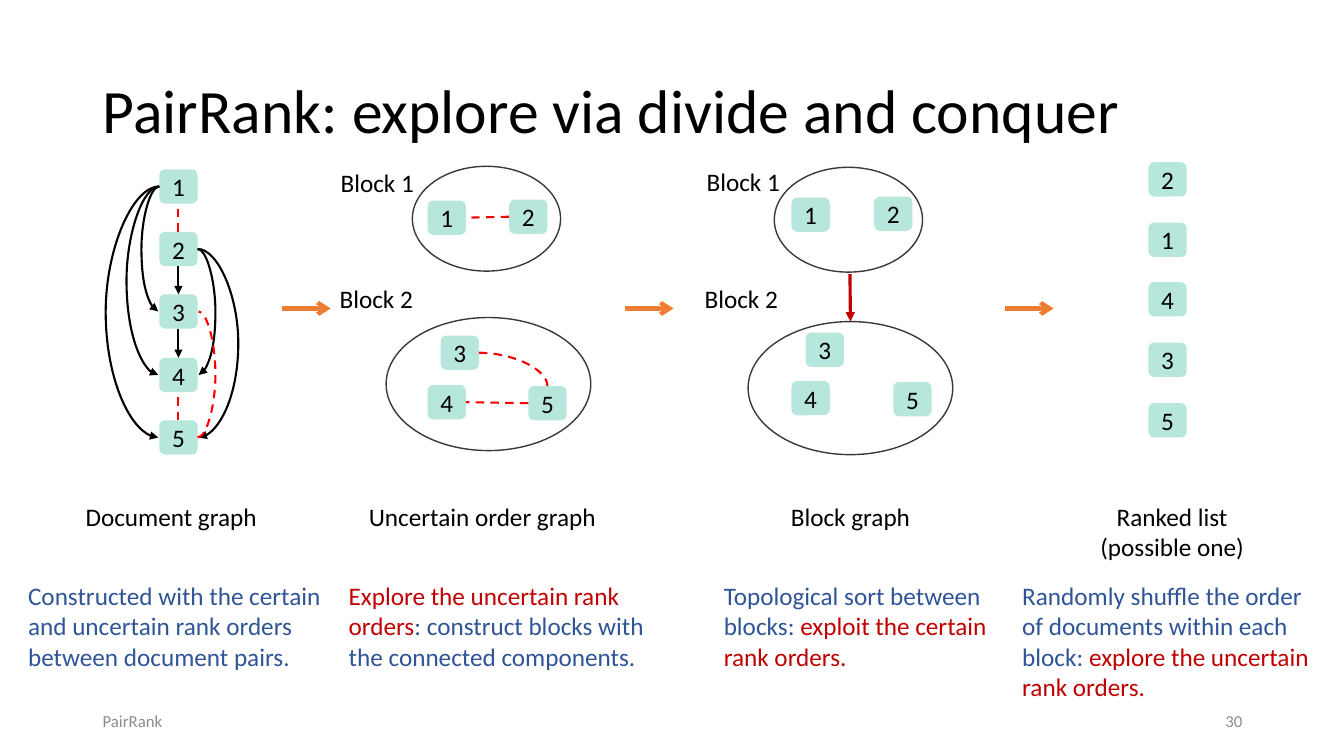
from dataclasses import dataclass

from lxml.etree import SubElement
from pptx import Presentation
from pptx.dml.color import RGBColor
from pptx.enum.dml import MSO_LINE
from pptx.enum.shapes import MSO_CONNECTOR, MSO_SHAPE
from pptx.enum.text import MSO_ANCHOR, MSO_AUTO_SIZE, PP_ALIGN
from pptx.oxml.ns import qn
from pptx.util import Pt

EMU_PER_PX = 9144  # 100 px to the inch
NODE_W, NODE_H = 38, 34
TOP, LEFT, BOTTOM, RIGHT = range(4)
BLACK, BLUE, RED, EDGE_RED = "000000", "2F5597", "C00000", "FF0000"
MINT, ORANGE, OUTLINE, GREY = "B7E6DC", "ED7D31", "3B3838", "8C8C8C"


@dataclass(frozen=True)
class Label:
    box: tuple[int, int, int, int]
    runs: tuple[tuple[str, str], ...]
    align: PP_ALIGN = PP_ALIGN.LEFT
    size: int = 18
    anchor: MSO_ANCHOR = MSO_ANCHOR.TOP


@dataclass(frozen=True)
class Edge:
    """A link between two numbered documents; reach is how far a curve bulges."""
    start: int
    start_side: int
    end: int
    end_side: int
    certain: bool
    reach: int = 0


DOCUMENT_SPOTS = {n: (158, round(168 + 62.25 * (n - 1))) for n in range(1, 6)}
UNCERTAIN_SPOTS = {1: (424, 199), 2: (505, 198), 3: (437, 333), 4: (424, 382), 5: (524, 383)}
BLOCK_SPOTS = {1: (785, 196), 2: (867, 195), 3: (799, 330), 4: (785, 378), 5: (886, 379)}
RANKED_SPOTS = {n: (1139, round(161 + 59.75 * rank)) for rank, n in enumerate((2, 1, 4, 3, 5))}

DOCUMENT_EDGES = (
    Edge(1, LEFT, 3, LEFT, True, 18),
    Edge(1, LEFT, 4, LEFT, True, 33),
    Edge(1, LEFT, 5, LEFT, True, 54),
    Edge(2, RIGHT, 4, RIGHT, True, 18),
    Edge(2, RIGHT, 5, RIGHT, True, 41),
    Edge(2, TOP, 1, BOTTOM, False),
    Edge(2, BOTTOM, 3, TOP, True),
    Edge(3, BOTTOM, 4, TOP, True),
    Edge(5, TOP, 4, BOTTOM, False),
    Edge(5, RIGHT, 3, RIGHT, False, 18),
)
UNCERTAIN_EDGES = (
    Edge(2, LEFT, 1, RIGHT, False),
    Edge(5, LEFT, 4, RIGHT, False),
    Edge(3, RIGHT, 5, TOP, False),
)
GRAPHS = (
    (DOCUMENT_SPOTS, DOCUMENT_EDGES),
    (UNCERTAIN_SPOTS, UNCERTAIN_EDGES),
    (BLOCK_SPOTS, ()),
    (RANKED_SPOTS, ()),
)
UPPER_BLOCKS = ((409, 165), (768, 166))
LOWER_BLOCKS = ((383, 315), (742, 319))
STEP_ARROWS = (280, 620, 997)

LABELS = (
    Label((75, 492, 205, 40), (("Document graph", BLACK),)),
    Label((356, 492, 256, 40), (("Uncertain order graph", BLACK),)),
    Label((769, 492, 149, 40), (("Block graph", BLACK),), PP_ALIGN.CENTER),
    Label((1064, 492, 197, 71), (("Ranked list (possible one)", BLACK),), PP_ALIGN.CENTER),
    Label((328, 161, 110, 40), (("Block 1", BLACK),)),
    Label((327, 276, 110, 40), (("Block 2", BLACK),)),
    Label((691, 160, 110, 40), (("Block 1", BLACK),)),
    Label((689, 276, 110, 40), (("Block 2", BLACK),)),
    Label((18, 571, 318, 101), ((
        "Constructed with the certain and uncertain rank orders between document pairs.", BLUE),)),
    Label((336, 571, 318, 101), (
        ("Explore the uncertain rank orders", RED),
        (": construct blocks with the connected components.", BLUE))),
    Label((708, 571, 318, 101), (
        ("Topological sort between blocks: ", BLUE),
        ("exploit the certain rank orders.", RED))),
    Label((1004, 571, 318, 131), (
        ("Randomly shuffle the order of documents within each block: ", BLUE),
        ("explore the uncertain rank orders.", RED))),
    Label((92, 695, 300, 40), (("PairRank", GREY),), size=12, anchor=MSO_ANCHOR.MIDDLE),
    Label((942, 695, 300, 40), (("30", GREY),), PP_ALIGN.RIGHT, 12, MSO_ANCHOR.MIDDLE),
)


def px(*lengths: int) -> list[int]:
    return [length * EMU_PER_PX for length in lengths]


def paint(color_format, color: str) -> None:
    color_format.rgb = RGBColor.from_string(color)


def set_all(target, values: dict) -> None:
    for attribute, value in values.items():
        setattr(target, attribute, value)


def write(frame, runs, align: PP_ALIGN, size: int, anchor: MSO_ANCHOR) -> None:
    set_all(frame, {"word_wrap": True, "auto_size": MSO_AUTO_SIZE.NONE,
                    "vertical_anchor": anchor})
    paragraph = frame.paragraphs[0]
    paragraph.alignment = align
    for text, color in runs:
        run = paragraph.add_run()
        run.text = text
        set_all(run.font, {"name": "Calibri", "size": Pt(size)})
        paint(run.font.color, color)


def add_label(slide, label: Label) -> None:
    frame = slide.shapes.add_textbox(*px(*label.box)).text_frame
    write(frame, label.runs, label.align, label.size, label.anchor)


def add_node(slide, number: int, spot: tuple[int, int]):
    node = slide.shapes.add_shape(MSO_SHAPE.ROUNDED_RECTANGLE, *px(*spot, NODE_W, NODE_H))
    node.shadow.inherit = False
    node.fill.solid()
    paint(node.fill.fore_color, MINT)
    node.line.fill.background()
    write(node.text_frame, ((str(number), BLACK),), PP_ALIGN.CENTER, 18, MSO_ANCHOR.MIDDLE)
    return node


def add_block(slide, spot: tuple[int, int], width: int, height: int):
    block = slide.shapes.add_shape(MSO_SHAPE.OVAL, *px(*spot, width, height))
    block.shadow.inherit = False
    block.fill.background()
    block.line.width = Pt(1)
    paint(block.line.color, OUTLINE)
    return block


def add_link(slide, kind, ends, color: str, weight: float, head: str = ""):
    link = slide.shapes.add_connector(kind, *px(*ends))
    link.line.width = Pt(weight)
    paint(link.line.color, color)
    if head:
        SubElement(link.line._get_or_add_ln(), qn("a:tailEnd"), type=head)
    else:
        link.line.dash_style = MSO_LINE.DASH
    SubElement(link._element.spPr, qn("a:effectLst"))
    return link


def add_edge(slide, nodes: dict, edge: Edge) -> None:
    turns = {edge.start_side, edge.end_side} == {RIGHT, TOP}
    kind = MSO_CONNECTOR.CURVE if edge.reach or turns else MSO_CONNECTOR.STRAIGHT
    link = add_link(slide, kind, (0, 0, 0, 0), BLACK if edge.certain else EDGE_RED, 1.5,
                    "triangle" if edge.certain else "")
    link.begin_connect(nodes[edge.start], edge.start_side)
    link.end_connect(nodes[edge.end], edge.end_side)
    geometry = link._element.spPr.find(qn("a:prstGeom"))
    if turns:
        geometry.set("prst", "curvedConnector2")
    if edge.reach:
        # The bulge is a multiple of the width, so the width is made one px.
        link.end_x = link.begin_x + EMU_PER_PX * (1 if edge.end_side == RIGHT else -1)
        SubElement(geometry.find(qn("a:avLst")), qn("a:gd"),
                   name="adj1", fmla=f"val {edge.reach * 100000}")


def main() -> None:
    deck = Presentation()
    set_all(deck, dict(zip(("slide_width", "slide_height"), px(1333, 750))))
    slide = deck.slides.add_slide(deck.slide_layouts[5])

    title = slide.shapes.title
    set_all(title, dict(zip(("left", "top", "width", "height"), px(92, 40, 1150, 145))))
    write(title.text_frame, (("PairRank: explore via divide and conquer", BLACK),),
          PP_ALIGN.LEFT, 44, MSO_ANCHOR.MIDDLE)
    title.text_frame.paragraphs[0].line_spacing = 0.9

    for spots, edges in GRAPHS:
        nodes = {number: add_node(slide, number, spot) for number, spot in spots.items()}
        for edge in edges:
            add_edge(slide, nodes, edge)
    for spot in UPPER_BLOCKS:
        add_block(slide, spot, 147, 104)
    lower_blocks = [add_block(slide, spot, 203, 132) for spot in LOWER_BLOCKS]
    block_order = add_link(slide, MSO_CONNECTOR.STRAIGHT, (843, 272, 844, 319),
                           RED, 2.25, "triangle")
    block_order.end_connect(lower_blocks[-1], TOP)
    for left in STEP_ARROWS:
        add_link(slide, MSO_CONNECTOR.STRAIGHT, (left, 306, left + 48, 306), ORANGE, 3, "arrow")
    for label in LABELS:
        add_label(slide, label)
    deck.save("out.pptx")


if __name__ == "__main__":
    main()
